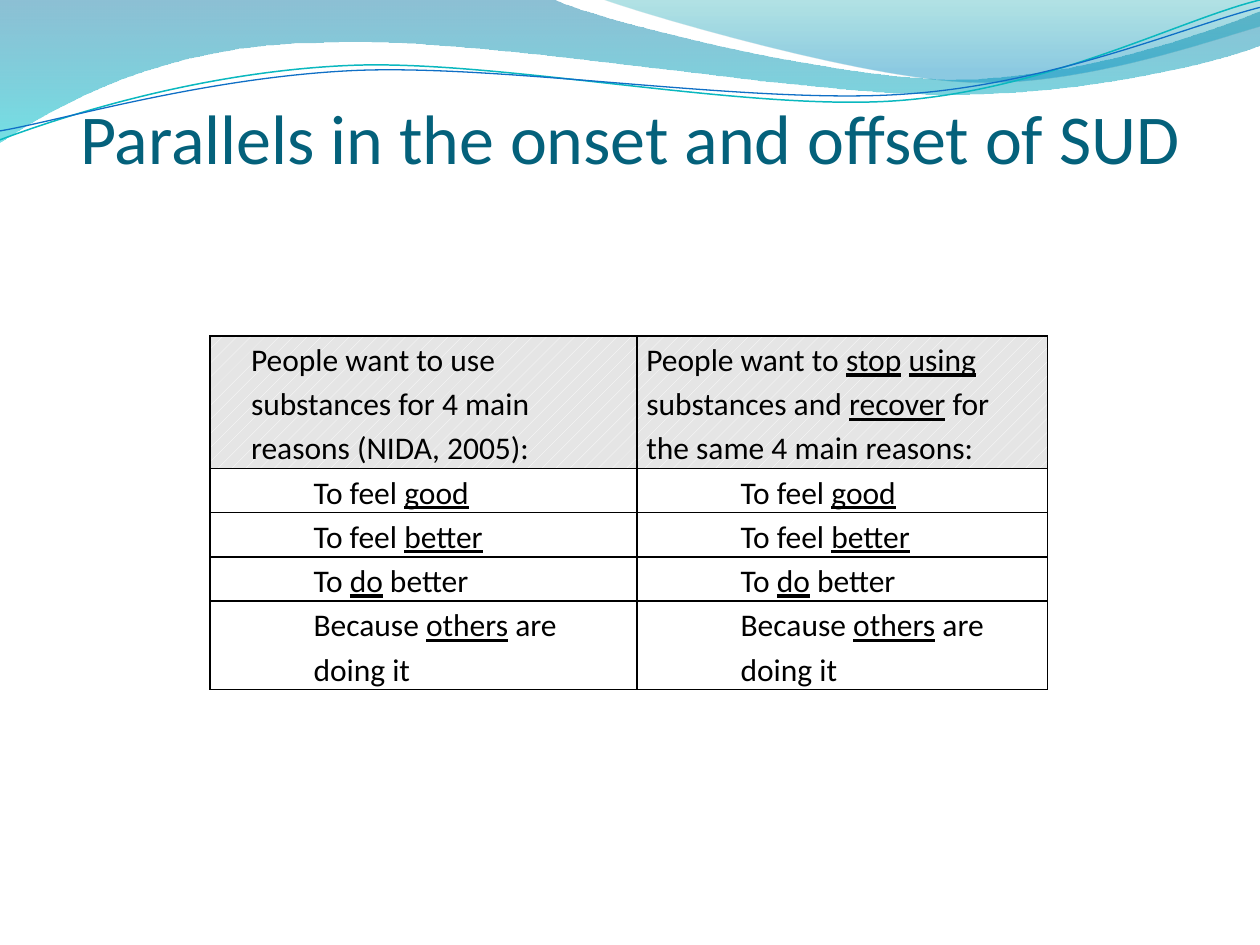
from lxml import etree
from pptx import Presentation
from pptx import util as u
from pptx.dml.color import RGBColor
from pptx.enum import dml, text
from pptx.oxml.ns import qn

TITLE = "Parallels in the onset and offset of SUD"
HEADERS = [
    "People want to use substances for 4 main reasons (NIDA, 2005):",
    "People want to _stop_ _using_ substances and _recover_ for the same 4 main reasons:",
]
REASONS = ["To feel _good_", "To feel _better_", "To _do_ better", "Because _others_ are doing it"]
ROWS = [HEADERS] + [[reason, reason] for reason in REASONS]
ROW_LINES = [3, 1, 1, 1, 2]
HEADER_INDENTS = [0.64, 0]
REASON_INDENT = 1.9
COLUMN_WIDTHS = [8.61, 8.28]
TABLE_LEFT, TABLE_TOP, LINE_HEIGHT = 4.23, 6.77, 0.89
TITLE_BOX = {"left": 1.27, "top": 0.84, "width": 22.86, "height": 2.76}

THEME = {
    "font": "Calibri",
    "title": {"size": u.Pt(40), "color": "04617B"},
    "body": {"size": u.Pt(18), "color": "000000"},
    "border": ("000000", 1),
    "header": ("FFFFFF", "E5E5E5"),
}

WAVES = [
    {"start": (0, 0),
     "segments": [(11.18, 0), (12.09, 0.43, 16.87, 1.6, 19.25, 1.6),
                  (21.67, 1.6, 24.33, 0.66, 25.4, 0.23), (25.4, 0.91),
                  (24.97, 1.12, 22.1, 1.93, 18.95, 1.9),
                  (15.8, 1.9, 9.7, 0.71, 6.53, 0.86),
                  (3.28, 0.89, 1.17, 2.11, 0, 2.87)],
     "stops": [(0, "0074A1", 45), (1, "00C6CF", 55)]},
    {"start": (12.17, 0),
     "segments": [(12.93, 0.28, 17.32, 1.57, 19.53, 1.65),
                  (21.74, 1.75, 24.41, 0.81, 25.4, 0.53), (25.4, 0)],
     "stops": [(0, "00A1A9", 30), (0.8, "008BBF", 45)]},
    {"start": (0, 2.82),
     "segments": [(1.22, 2.36, 4.01, 1.45, 7.04, 1.32),
                  (10.03, 1.19, 15.06, 2.26, 18.11, 2.03),
                  (21.16, 1.8, 23.83, 0.38, 25.4, 0)],
     "line": ("0AB8BF", 0.85)},
    {"start": (0, 2.64),
     "segments": [(1.19, 2.44, 4.17, 1.55, 7.19, 1.42),
                  (10.24, 1.3, 15.16, 2.11, 18.21, 1.9),
                  (21.23, 1.7, 23.9, 0.53, 25.4, 0.15)],
     "line": ("0F6FC6", 0.75)},
]


def set_all(target, values):
    for name, value in values.items():
        setattr(target, name, value)


def format_font(font, style):
    set_all(font, {"name": THEME["font"], "size": style["size"], "bold": False})
    font.color.rgb = RGBColor.from_string(style["color"])


def bend_segments(shape, segments):
    corners = iter(list(shape._element.spPr.iter(qn("a:lnTo"))))
    for segment in segments:
        first = next(corners)
        if len(segment) == 2:
            continue
        curve = etree.Element(qn("a:cubicBezTo"))
        first.addprevious(curve)
        for corner in (first, next(corners), next(corners)):
            curve.append(corner[0])
            corner.getparent().remove(corner)


def add_wave(page, wave):
    start, segments = wave["start"], wave["segments"]
    points = [(u.Cm(s[i]), u.Cm(s[i + 1])) for s in segments for i in range(0, len(s), 2)]
    builder = page.shapes.build_freeform(u.Cm(start[0]), u.Cm(start[1]))
    builder.add_line_segments(points, close="stops" in wave)
    shape = builder.convert_to_shape()
    bend_segments(shape, segments)
    shape.shadow.inherit = False
    if "line" in wave:
        color, width = wave["line"]
        shape.fill.background()
        shape.line.color.rgb = RGBColor.from_string(color)
        shape.line.width = u.Pt(width)
        return
    shape.line.fill.background()
    shape.fill.gradient()
    shape.fill.gradient_angle = 270
    for stop, (position, color, _) in zip(shape.fill.gradient_stops, wave["stops"]):
        stop.position = position
        stop.color.rgb = RGBColor.from_string(color)
    colors = shape._element.spPr.iter(qn("a:srgbClr"))
    for node, (_, _, opacity) in zip(colors, wave["stops"]):
        etree.SubElement(node, qn("a:alpha")).set("val", str(opacity * 1000))


def add_borders(cell):
    color, width = THEME["border"]
    properties = cell._tc.get_or_add_tcPr()
    for index, side in enumerate(("lnL", "lnR", "lnT", "lnB")):
        line = etree.Element(qn("a:" + side), w=str(u.Pt(width)))
        fill = etree.SubElement(line, qn("a:solidFill"))
        etree.SubElement(fill, qn("a:srgbClr")).set("val", color)
        properties.insert(index, line)


def fill_cell(cell, content, indent, is_header):
    set_all(cell, {"margin_left": u.Cm(0.19), "margin_right": u.Cm(0.19),
                   "margin_top": 0, "margin_bottom": 0})
    if is_header:
        cell.fill.patterned()
        cell.fill.pattern = dml.MSO_PATTERN.PERCENT_10
        front, back = THEME["header"]
        cell.fill.fore_color.rgb = RGBColor.from_string(front)
        cell.fill.back_color.rgb = RGBColor.from_string(back)
    else:
        cell.fill.background()
    add_borders(cell)
    para = cell.text_frame.paragraphs[0]
    para.line_spacing = 1.15
    para._p.get_or_add_pPr().set("marL", str(u.Cm(indent)))
    for index, part in enumerate(content.split("_")):
        if part:
            span = para.add_run()
            span.text = part
            format_font(span.font, THEME["body"])
            span.font.underline = index % 2 == 1


def add_reasons(page):
    frame = page.shapes.add_table(
        len(ROWS), len(COLUMN_WIDTHS), u.Cm(TABLE_LEFT), u.Cm(TABLE_TOP),
        u.Cm(sum(COLUMN_WIDTHS)), u.Cm(LINE_HEIGHT * sum(ROW_LINES)))
    table = frame.table
    set_all(table, {"first_row": False, "horz_banding": False})
    for column, width in zip(table.columns, COLUMN_WIDTHS):
        column.width = u.Cm(width)
    for r, (contents, lines) in enumerate(zip(ROWS, ROW_LINES)):
        table.rows[r].height = u.Cm(LINE_HEIGHT * lines)
        for c, content in enumerate(contents):
            indent = REASON_INDENT if r else HEADER_INDENTS[c]
            fill_cell(table.cell(r, c), content, indent, r == 0)


def place_title(page):
    box = page.shapes.title
    set_all(box, {name: u.Cm(value) for name, value in TITLE_BOX.items()})
    frame = box.text_frame
    set_all(frame, {"text": TITLE, "word_wrap": True, "auto_size": text.MSO_AUTO_SIZE.NONE,
                    "vertical_anchor": text.MSO_ANCHOR.BOTTOM, "margin_left": 0,
                    "margin_right": 0, "margin_top": u.Cm(0.13), "margin_bottom": 0})
    para = frame.paragraphs[0]
    para.alignment = text.PP_ALIGN.CENTER
    format_font(para.runs[0].font, THEME["title"])
    page.shapes._spTree.append(box._element)


def main():
    deck = Presentation()
    set_all(deck, {"slide_width": u.Cm(25.4), "slide_height": u.Cm(19.05)})
    page = deck.slides.add_slide(deck.slide_layouts[5])
    for wave in WAVES:
        add_wave(page, wave)
    add_reasons(page)
    place_title(page)
    deck.save("out.pptx")


if __name__ == "__main__":
    main()
